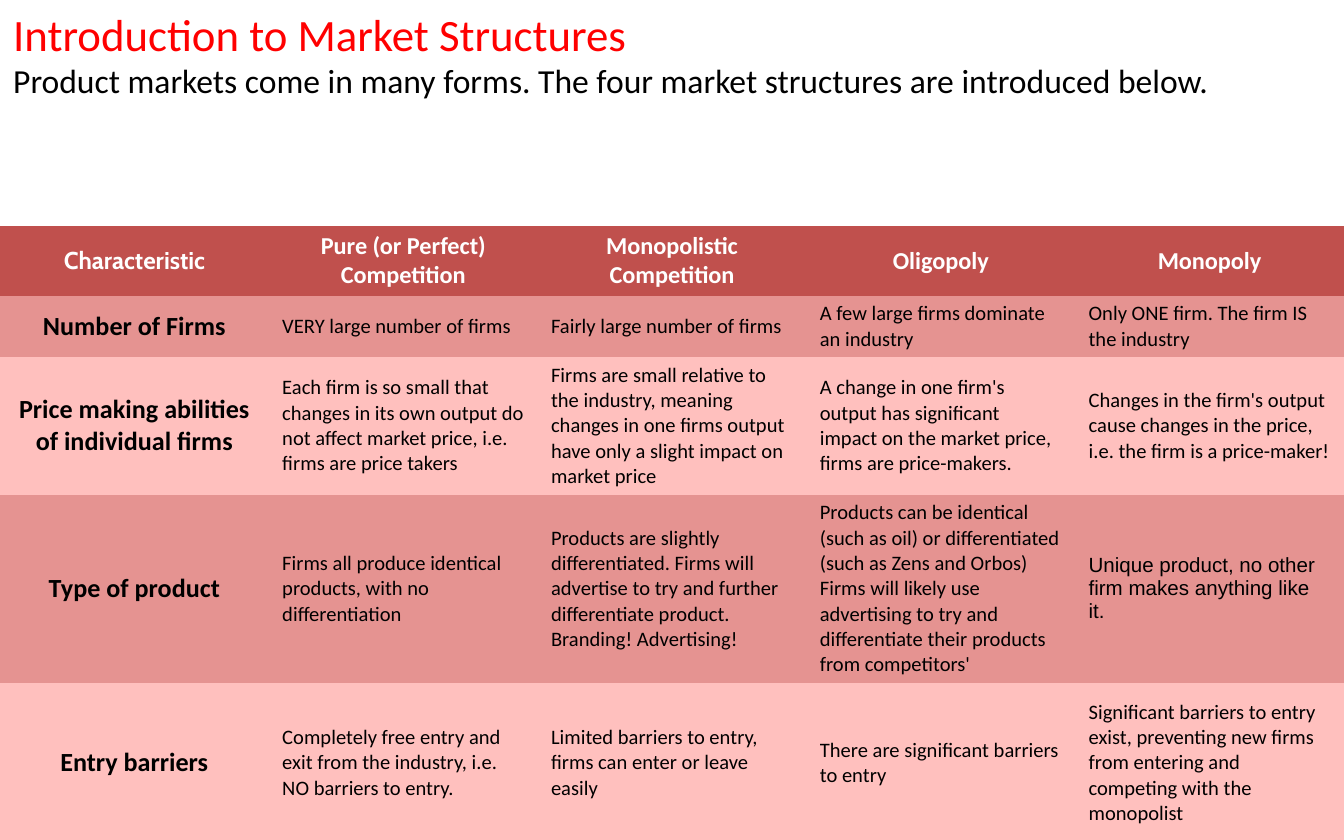
from pptx import Presentation
from pptx.dml.color import RGBColor
from pptx.enum.text import MSO_ANCHOR, MSO_AUTO_SIZE, PP_ALIGN
from pptx.oxml.ns import qn
from pptx.util import Inches, Pt

CENTER, LEFT = PP_ALIGN.CENTER, PP_ALIGN.LEFT
MIDDLE = MSO_ANCHOR.MIDDLE
FIT_SHAPE = MSO_AUTO_SIZE.SHAPE_TO_FIT_TEXT
PLAIN_STYLE = "{2D5ABB26-0587-4C30-8999-92F81FD0307C}"  # no style, no grid

HEADER_FILL = "C0504D"
BAND_FILLS = ["E59391", "FFC0BE"]
BLACK, WHITE, RED = "000000", "FFFFFF", "FF0000"

TITLE = "Introduction to Market Structures"
INTRO = ("Product markets come in many forms. "
         "The four market structures are introduced below.")

ROW_HEIGHTS = [0.45, 0.39, 0.87, 1.19, 1.19]
ROWS = [
    ["Characteristic", "Pure (or Perfect)\nCompetition",
     "Monopolistic Competition", "Oligopoly", "Monopoly"],
    ["Number of Firms",
     "VERY large number of firms",
     "Fairly large number of firms",
     "A few large firms dominate an industry",
     "Only ONE firm. The firm IS the industry"],
    ["Price making abilities of individual firms",
     "Each firm is so small that changes in its own output do not affect "
     "market price, i.e. firms are price takers",
     "Firms are small relative to the industry, meaning changes in one firms "
     "output have only a slight impact on market price",
     "A change in one firm's output has significant impact on the market "
     "price, firms are price-makers.",
     "Changes in the firm's output cause changes in the price, i.e. the firm "
     "is a price-maker!"],
    ["Type of product",
     "Firms all produce identical products, with no differentiation",
     "Products are slightly differentiated. Firms will advertise to try and "
     "further differentiate product. Branding! Advertising!",
     "Products can be identical (such as oil) or differentiated (such as "
     "Zens and Orbos)\nFirms will likely use advertising to try and "
     "differentiate their products from competitors'",
     "Unique product, no other firm makes anything like it."],
    ["Entry barriers",
     "Completely free entry and exit from the industry, i.e. NO barriers to "
     "entry.",
     "Limited barriers to entry, firms can enter or leave easily",
     "There are significant barriers to entry",
     "Significant barriers to entry exist, preventing new firms from entering "
     "and competing with the monopolist"],
]
FONT = "Calibri"
SPECIAL_FONTS = {(0, 0): "Cabin", (3, 4): "Arial"}  # (row, column)


def rgb(color):
    return RGBColor.from_string(color)


def style(p, size, color, font=FONT, bold=False, align=LEFT):
    p.alignment = align
    for r in p.runs:
        r.font.size = Pt(size)
        r.font.name = font
        r.font.bold = bold
        r.font.color.rgb = rgb(color)


def fill_cell(cell, text, row, col):
    cell.fill.solid()
    cell.fill.fore_color.rgb = rgb(
        BAND_FILLS[(row - 1) % 2] if row else HEADER_FILL)
    cell.vertical_anchor = MIDDLE
    cell.margin_left = cell.margin_right = Inches(0.1)
    cell.margin_top = cell.margin_bottom = Inches(0.04)
    heading = row == 0 or col == 0
    size = 13 if row == 0 else 14 if col == 0 else 11
    cell.text_frame.text = text
    for p in cell.text_frame.paragraphs:
        style(p, size, BLACK if row else WHITE,
              SPECIAL_FONTS.get((row, col), FONT), heading,
              CENTER if heading else LEFT)


def add_structures_table(s):
    frame = s.shapes.add_table(len(ROWS), len(ROWS[0]), 0, Inches(1.68),
                               Inches(10), Inches(sum(ROW_HEIGHTS)))
    table = frame.table
    next(table._tbl.iter(qn("a:tableStyleId"))).text = PLAIN_STYLE
    for row, (height, texts) in enumerate(zip(ROW_HEIGHTS, ROWS)):
        table.rows[row].height = Inches(height)
        for col, text in enumerate(texts):
            fill_cell(table.cell(row, col), text, row, col)


def add_heading(s):
    tf = s.shapes.add_textbox(0, 0, Inches(10), Inches(0.81)).text_frame
    tf.word_wrap = True
    tf.auto_size = FIT_SHAPE
    tf.text = f"{TITLE}\n{INTRO}"
    title, intro = tf.paragraphs
    style(title, 24, RED)
    style(intro, 18, BLACK)


def main():
    prs = Presentation()
    prs.slide_width, prs.slide_height = Inches(10), Inches(6.25)
    s = prs.slides.add_slide(prs.slide_layouts[6])
    add_structures_table(s)
    add_heading(s)
    prs.save("out.pptx")


if __name__ == "__main__":
    main()
